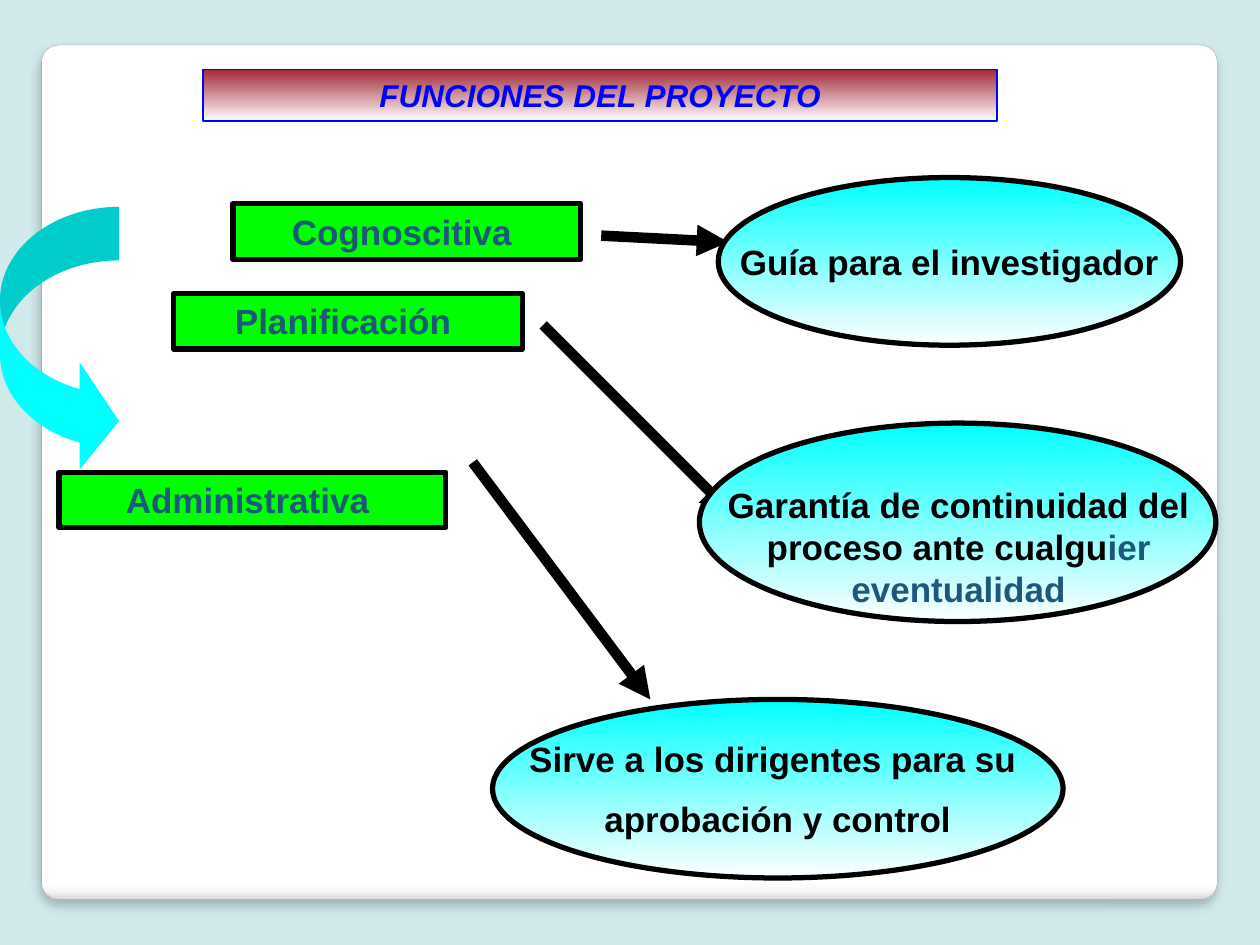
from dataclasses import dataclass

from lxml import etree
from pptx import Presentation
from pptx.dml.color import RGBColor
from pptx.enum import shapes, text
from pptx.oxml import parse_xml
from pptx.oxml.ns import nsdecls, qn
from pptx.util import Cm, Pt


@dataclass(frozen=True)
class Theme:
    font: str = "Arial"
    title_size: int = 18
    body_size: int = 20
    background: str = "D0EAEC"
    panel_edge: str = "A4A4A4"
    black: str = "000000"
    blue: str = "0000FF"
    slate: str = "1B587C"
    green: str = "00FF00"
    cyan: str = "00FFFF"
    title_fade: tuple = ((0, "9F2936"), (100, "FFFFFF"))
    oval_fade: tuple = ((0, "00FFFF"), (100, "FFFFFF"))
    panel_fade: tuple = ((0, "FFFFFF"), (98, "FFFFFF"), (99, "F7F7F7"), (100, "DADADA"))


theme = Theme()
SHAPE = shapes.MSO_SHAPE
deck = Presentation()
deck.slide_width, deck.slide_height = Cm(25.4), Cm(19.05)
page = deck.slides.add_slide(deck.slide_layouts[6])
page.background.fill.solid()
page.background.fill.fore_color.rgb = RGBColor.from_string(theme.background)


def add_figure(kind, place, fill, edge=None, width=0):
    """Add a preset shape; fill is one colour or the stops of a downward fade."""
    figure = page.shapes.add_shape(kind, *map(Cm, place))
    figure.shadow.inherit = False
    if isinstance(fill, str):
        figure.fill.solid()
        figure.fill.fore_color.rgb = RGBColor.from_string(fill)
    else:
        figure.fill.gradient()
        figure.fill.gradient_angle = 270
        stops = figure._element.spPr.find(qn("a:gradFill")).find(qn("a:gsLst"))
        for stop in list(stops):
            stops.remove(stop)
        for position, colour in fill:
            stop = etree.SubElement(stops, qn("a:gs"), pos=str(position * 1000))
            etree.SubElement(stop, qn("a:srgbClr"), val=colour)
    if edge:
        figure.line.color.rgb = RGBColor.from_string(edge)
        figure.line.width = Pt(width)
    else:
        figure.line.fill.background()
    return figure


def write(box, lines, colour, size=theme.body_size, italic=False,
          wrap=True, anchor=text.MSO_ANCHOR.TOP):
    frame = box.text_frame
    frame.word_wrap = wrap
    frame.vertical_anchor = anchor
    frame.text = "\n".join(lines)
    for number, para in enumerate(frame.paragraphs):
        para.alignment = text.PP_ALIGN.CENTER
        para.space_before = Pt(size / 2 if number else 0)
        para.font.name = theme.font
        para.font.size = Pt(size)
        para.font.bold = True
        para.font.italic = italic
        para.font.color.rgb = RGBColor.from_string(colour)


# Panel and title
panel = add_figure(SHAPE.ROUNDED_RECTANGLE, (0.84, 0.91, 23.7, 17.22),
                   theme.panel_fade, theme.panel_edge, 0.16)
panel.adjustments[0] = 0.02
panel._element.spPr.find(qn("a:effectLst")).append(parse_xml(
    f'<a:outerShdw {nsdecls("a")} blurRad="{Pt(6)}" dist="{Pt(4)}" dir="5400000" '
    f'rotWithShape="0"><a:srgbClr val="{theme.black}"><a:alpha val="25000"/>'
    '</a:srgbClr></a:outerShdw>'))

title = add_figure(SHAPE.RECTANGLE, (4.1, 1.4, 16, 1.04), theme.title_fade, theme.blue, 1)
write(title, ["FUNCIONES DEL PROYECTO"], theme.blue, theme.title_size, italic=True)

# Curved arrow and the three functions
curve = add_figure(SHAPE.CURVED_RIGHT_ARROW, (0, 4.17, 2.4, 5.4), theme.cyan)
for index, value in enumerate((0.45, 0.9, 0.33)):
    curve.adjustments[index] = value

for label, left, top, width in (("Cognoscitiva ", 4.7, 4.11, 7),
                                ("Planificación ", 3.5, 5.92, 7.03),
                                ("Administrativa ", 1.19, 9.52, 7.8)):
    box = add_figure(SHAPE.RECTANGLE, (left, top, width, 1.12), theme.green, theme.black, 3)
    write(box, [label], theme.slate)

# Arrows from each function to its purpose
for ends in ((12.12, 4.75, 14.68, 4.88), (10.95, 6.55, 14.76, 10.36), (9.53, 9.32, 13.11, 14.1)):
    arrow = page.shapes.add_connector(shapes.MSO_CONNECTOR.STRAIGHT, *map(Cm, ends))
    arrow.line.color.rgb = RGBColor.from_string(theme.black)
    arrow.line.width = Pt(6)
    etree.SubElement(arrow.line._get_or_add_ln(), qn("a:tailEnd"), type="triangle")
    etree.SubElement(arrow._element.spPr, qn("a:effectLst"))

# Purposes
for place, lines in (
    ((14.48, 3.58, 9.32, 3.38), ["Guía para el investigador"]),
    ((14.1, 8.53, 10.41, 4), []),
    ((9.93, 14.1, 11.5, 3.6), ["Sirve a los dirigentes para su ", "aprobación y control"]),
):
    oval = add_figure(SHAPE.OVAL, place, theme.oval_fade, theme.black, 3)
    if lines:
        write(oval, lines, theme.black, wrap=False, anchor=text.MSO_ANCHOR.MIDDLE)

guarantee = page.shapes.add_textbox(*map(Cm, (14.27, 9.63, 10.11, 2.82)))
write(guarantee, ["Garantía de continuidad del proceso ante cualgu"], theme.black)
span = guarantee.text_frame.paragraphs[0].add_run()
span.text = "ier eventualidad"
span.font.color.rgb = RGBColor.from_string(theme.slate)

deck.save("out.pptx")
